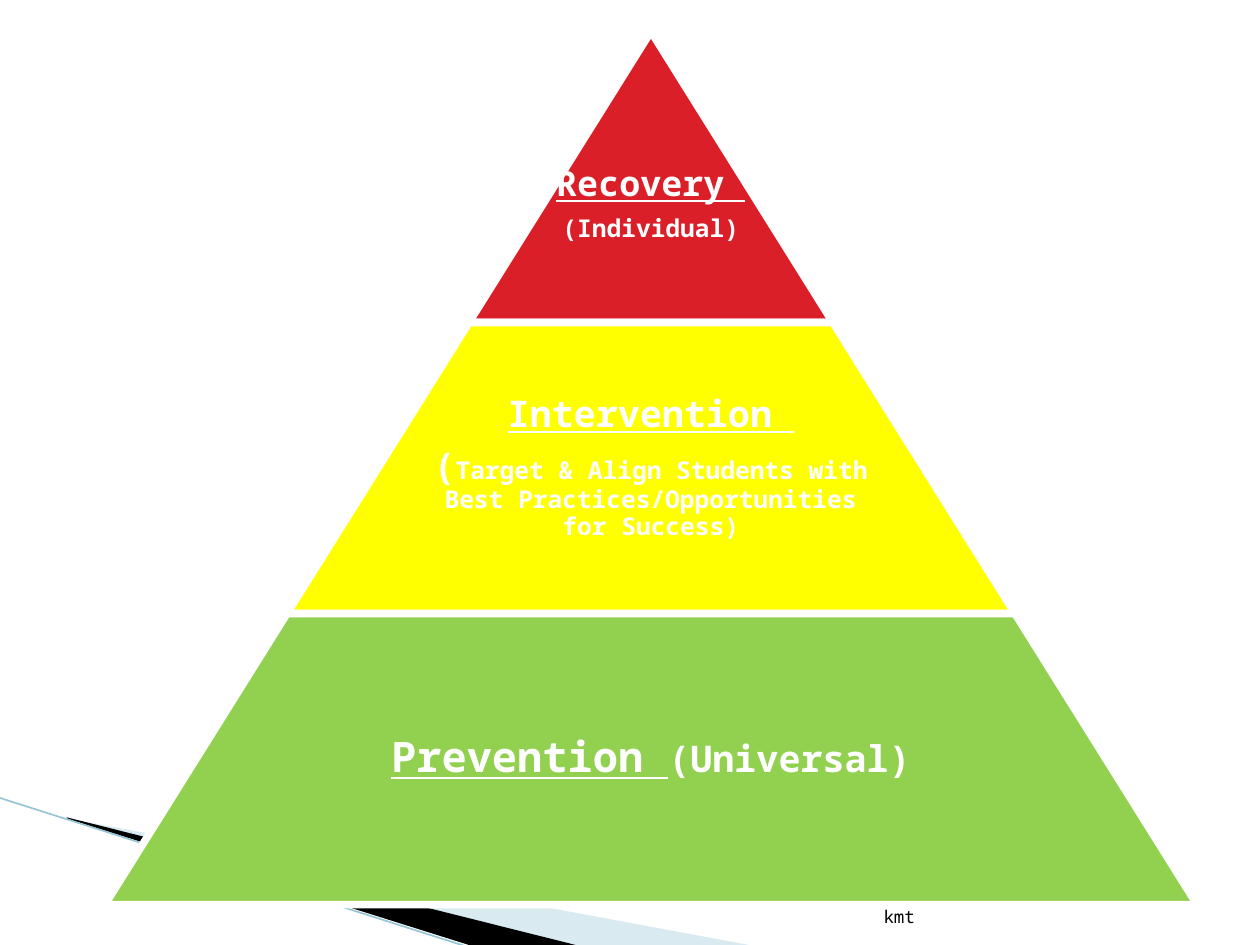
from dataclasses import dataclass

from lxml.etree import SubElement
from pptx import Presentation
from pptx.dml.color import RGBColor
from pptx.enum.shapes import MSO_CONNECTOR, MSO_SHAPE
from pptx.enum.text import MSO_ANCHOR, PP_ALIGN
from pptx.oxml.ns import qn
from pptx.util import Pt


@dataclass(frozen=True)
class Theme:
    font: str = "Noto Sans Mono"
    white: RGBColor = RGBColor(0xFF, 0xFF, 0xFF)
    black: RGBColor = RGBColor(0, 0, 0)
    red: RGBColor = RGBColor(0xDA, 0x1F, 0x28)
    yellow: RGBColor = RGBColor(0xFF, 0xFF, 0)
    green: RGBColor = RGBColor(0x92, 0xD0, 0x50)
    pale_blue: RGBColor = RGBColor(0xA0, 0xCB, 0xDC)
    line_blue: RGBColor = RGBColor(0x97, 0xC5, 0xD8)
    footer: int = 10
    detail: int = 14
    small_heading: int = 20
    heading: int = 21
    large_heading: int = 24


THEME = Theme()
CENTRE, TOP = 372, 18
TIER_HEIGHT, TIER_STEP = 166.3, 208
INSET = 3.6 * 0.6


def set_all(target, values):
    for name, value in values.items():
        setattr(target, name, value)


def add_run(paragraph, text, size, color=THEME.white, bold=True, underline=False):
    run = paragraph.add_run()
    run.text = text
    set_all(run.font, {"name": THEME.font, "size": Pt(size), "bold": bold, "underline": underline})
    run.font.color.rgb = color


def add_text(slide, box, paragraphs, frame_format, paragraph_format):
    """Add a text box; each paragraph is a list of run-argument dicts."""
    frame = slide.shapes.add_textbox(*map(Pt, box)).text_frame
    set_all(frame, {"word_wrap": True, **frame_format})
    for index, runs in enumerate(paragraphs):
        paragraph = frame.add_paragraph() if index else frame.paragraphs[0]
        set_all(paragraph, paragraph_format)
        for run in runs:
            add_run(paragraph, **run)


def add_swoosh(slide, points, color, opacity=None):
    builder = slide.shapes.build_freeform(*points[0], scale=Pt(1))
    builder.add_line_segments(points[1:], close=True)
    shape = builder.convert_to_shape()
    shape.shadow.inherit = False
    shape.fill.solid()
    shape.fill.fore_color.rgb = color
    shape.line.fill.background()
    if opacity:
        color_element = shape.fill._xPr.find(qn("a:solidFill"))[0]
        SubElement(color_element, qn("a:alpha"), val=str(opacity * 1000))


def add_accent_line(slide, start, end):
    line = slide.shapes.add_connector(MSO_CONNECTOR.STRAIGHT, *map(Pt, (*start, *end)))
    line.line.color.rgb = THEME.line_blue
    line.line.width = Pt(0.95)
    SubElement(line._element.spPr, qn("a:effectLst"))


def add_tier(slide, index, color, text_width, paragraphs, text_shift=0):
    width = TIER_STEP * (index + 1)
    top = TOP + TIER_HEIGHT * index
    shape = slide.shapes.add_shape(
        MSO_SHAPE.TRAPEZOID, *map(Pt, (CENTRE - width / 2, top, width, TIER_HEIGHT)))
    shape.adjustments[0] = TIER_STEP / 2 / TIER_HEIGHT
    shape.shadow.inherit = False
    shape.fill.solid()
    shape.fill.fore_color.rgb = color
    shape.line.color.rgb = THEME.white
    shape.line.width = Pt(4.33)
    margins = {f"margin_{side}": Pt(INSET) for side in ("left", "top", "right", "bottom")}
    add_text(
        slide, (CENTRE - text_width / 2, top + text_shift, text_width, TIER_HEIGHT), paragraphs,
        {"vertical_anchor": MSO_ANCHOR.MIDDLE, **margins},
        {"alignment": PP_ALIGN.CENTER, "line_spacing": 0.9, "space_after": Pt(7)})


def main():
    presentation = Presentation()
    set_all(presentation, {"slide_width": Pt(720), "slide_height": Pt(540)})
    slide = presentation.slides.add_slide(presentation.slide_layouts[6])

    add_swoosh(slide, [(39.6, 468.5), (428.4, 540), (328.3, 540), (39.6, 468)],
               THEME.pale_blue, opacity=40)
    add_swoosh(slide, [(38.2, 467.3), (329, 540), (267.8, 540), (38.9, 468)], THEME.black)
    add_accent_line(slide, (0, 456), (267, 541))
    add_text(slide, (344.9, 504.7, 185, 28.8),
             [[dict(text="kmt", size=THEME.footer, color=THEME.black, bold=False)]],
             {"vertical_anchor": MSO_ANCHOR.BOTTOM}, {"alignment": PP_ALIGN.RIGHT})

    add_tier(slide, 0, THEME.red, 208, [
        [dict(text="Recovery ", size=THEME.small_heading, underline=True)],
        [dict(text="(Individual)", size=THEME.detail)],
    ], text_shift=16)
    add_tier(slide, 1, THEME.yellow, 271, [
        [dict(text="Intervention ", size=THEME.heading, underline=True)],
        [dict(text="(", size=THEME.heading),
         dict(text="Target & Align Students with Best Practices/Opportunities for Success)",
              size=THEME.detail)],
    ])
    add_tier(slide, 2, THEME.green, 405.5, [
        [dict(text=" ", size=THEME.heading, bold=False),
         dict(text="Prevention ", size=THEME.large_heading, underline=True),
         dict(text="(Universal) ", size=THEME.heading)],
    ])
    presentation.save("out.pptx")


if __name__ == "__main__":
    main()
